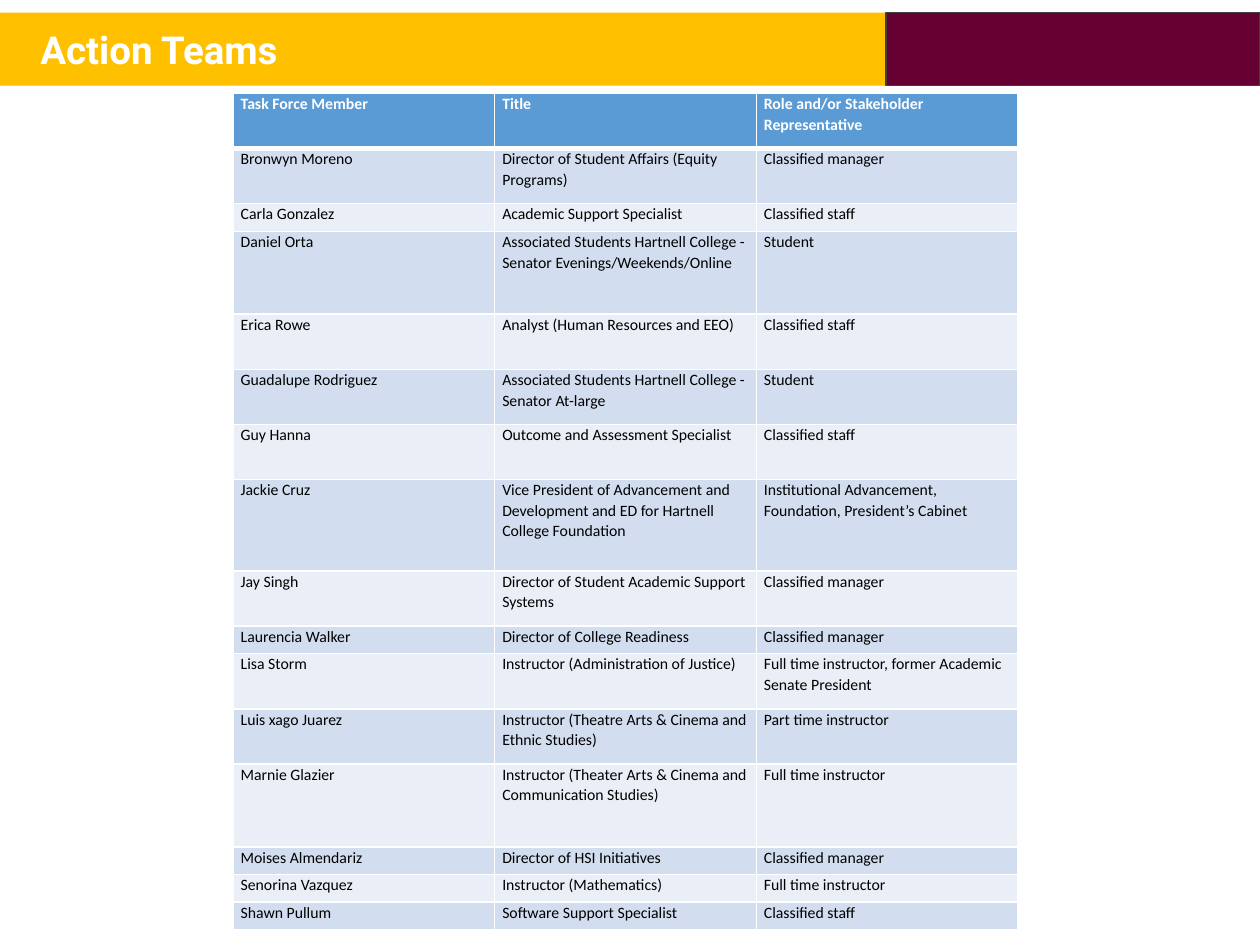
import pptx
import pptx.dml.color
import pptx.enum.shapes
import pptx.enum.text
import pptx.oxml
import pptx.oxml.ns
import pptx.util

RGBColor = pptx.dml.color.RGBColor
GOLD = RGBColor(0xFF, 0xC0, 0x00)
MAROON = RGBColor(0x66, 0x00, 0x33)
CHARCOAL = RGBColor(0x40, 0x40, 0x40)
HEADER_BLUE = RGBColor(0x5B, 0x9B, 0xD5)
BAND_BLUE = RGBColor(0xD2, 0xDE, 0xEF)
PALE_BLUE = RGBColor(0xEA, 0xEF, 0xF7)
WHITE = RGBColor(0xFF, 0xFF, 0xFF)
BLACK = RGBColor(0x00, 0x00, 0x00)

HEADINGS = ("Task Force Member", "Title", "Role and/or Stakeholder Representative")
MEMBERS = [
    ("Bronwyn Moreno", "Director of Student Affairs (Equity Programs)", "Classified manager"),
    ("Carla Gonzalez", "Academic Support Specialist", "Classified staff"),
    ("Daniel Orta", "Associated Students Hartnell College - Senator Evenings/Weekends/Online", "Student"),
    ("Erica Rowe", "Analyst (Human Resources and EEO)", "Classified staff"),
    ("Guadalupe Rodriguez", "Associated Students Hartnell College - Senator At-large", "Student"),
    ("Guy Hanna", "Outcome and Assessment Specialist", "Classified staff"),
    ("Jackie Cruz", "Vice President of Advancement and Development and ED for Hartnell College Foundation",
     "Institutional Advancement, Foundation, President’s Cabinet"),
    ("Jay Singh", "Director of Student Academic Support Systems", "Classified manager"),
    ("Laurencia Walker", "Director of College Readiness", "Classified manager"),
    ("Lisa Storm", "Instructor (Administration of Justice)",
     "Full time instructor, former Academic Senate President"),
    ("Luis xago Juarez", "Instructor (Theatre Arts & Cinema and Ethnic Studies)", "Part time instructor"),
    ("Marnie Glazier", "Instructor (Theater Arts & Cinema and Communication Studies)", "Full time instructor"),
    ("Moises Almendariz", "Director of HSI Initiatives", "Classified manager"),
    ("Senorina Vazquez", "Instructor (Mathematics)", "Full time instructor"),
    ("Shawn Pullum", "Software Support Specialist", "Classified staff"),
]
ROW_UNITS = (2, 2, 1, 3, 2, 2, 2, 3.3, 2, 1, 2, 2, 3, 1, 1, 1)


class ActionTeamsSlide:
    """Holds the style and the current slide, with lengths in slide shares of 10 by 7.5 inches."""

    title_font = "Roboto"
    table_font = "Calibri"

    def __init__(self, presentation):
        self.width = presentation.slide_width
        self.height = presentation.slide_height
        self.slide = presentation.slides.add_slide(presentation.slide_layouts[5])

    def box(self, left, top, width, height):
        return (round(left * self.width), round(top * self.height),
                round(width * self.width), round(height * self.height))

    def font(self, paragraph, name, size, color, bold):
        paragraph.font.name = name
        paragraph.font.size = pptx.util.Pt(size)
        paragraph.font.color.rgb = color
        paragraph.font.bold = bold

    def title(self, text, place, fill):
        banner = self.slide.shapes.title
        banner.left, banner.top, banner.width, banner.height = self.box(*place)
        banner.fill.solid()
        banner.fill.fore_color.rgb = fill
        frame = banner.text_frame
        frame.text = text
        frame.auto_size = pptx.enum.text.MSO_AUTO_SIZE.NONE
        frame.vertical_anchor = pptx.enum.text.MSO_ANCHOR.MIDDLE
        frame.margin_left = pptx.util.Inches(0.32)
        frame.margin_right = pptx.util.Inches(0.07)
        frame.margin_top = frame.margin_bottom = pptx.util.Inches(0.04)
        heading = frame.paragraphs[0]
        heading.alignment = pptx.enum.text.PP_ALIGN.LEFT
        self.font(heading, self.title_font, 22, WHITE, True)

    def block(self, place, fill, outline):
        block = self.slide.shapes.add_shape(pptx.enum.shapes.MSO_SHAPE.RECTANGLE, *self.box(*place))
        block.shadow.inherit = False
        block.fill.solid()
        block.fill.fore_color.rgb = fill
        block.line.color.rgb = outline
        block.line.width = pptx.util.Pt(1)

    def borders(self, cell, widths):
        properties = cell._tc.get_or_add_tcPr()
        for side, points in widths.items():
            properties.append(pptx.oxml.parse_xml(
                f'<a:{side} {pptx.oxml.ns.nsdecls("a")} w="{pptx.util.Pt(points)}">'
                f'<a:solidFill><a:srgbClr val="{WHITE}"/></a:solidFill></a:{side}>'))

    def cell(self, cell, text, fill, color, is_header):
        sides = {"lnL": 1, "lnR": 1}
        sides.update({"lnT": 1, "lnB": 3} if is_header else {"lnB": 1})
        self.borders(cell, sides)
        cell.fill.solid()
        cell.fill.fore_color.rgb = fill
        cell.margin_left = cell.margin_right = pptx.util.Inches(0.06)
        cell.margin_top = cell.margin_bottom = 0
        cell.text = text
        entry = cell.text_frame.paragraphs[0]
        entry.line_spacing = 1.07
        entry.space_after = pptx.util.Pt(4.8)
        self.font(entry, self.table_font, 9, color, is_header)

    def table(self, rows, units, place):
        left, top, width, height = self.box(*place)
        columns = len(rows[0])
        roster = self.slide.shapes.add_table(len(rows), columns, left, top, width, height).table
        for column in roster.columns:
            column.width = width // columns
        for index, (texts, unit) in enumerate(zip(rows, units)):
            roster.rows[index].height = round(height * unit / sum(units))
            is_header = index == 0
            fill = HEADER_BLUE if is_header else BAND_BLUE if index % 2 else PALE_BLUE
            color = WHITE if is_header else BLACK
            for cell, text in zip(roster.rows[index].cells, texts):
                self.cell(cell, text, fill, color, is_header)


def main():
    presentation = pptx.Presentation()
    presentation.slide_width = pptx.util.Inches(10)
    presentation.slide_height = pptx.util.Inches(7.5)
    teams = ActionTeamsSlide(presentation)
    banner_top, banner_height, split = 0.1 / 7.5, 0.58 / 7.5, 0.703
    teams.title("Action Teams", (0, banner_top, split, banner_height), GOLD)
    teams.block((split, banner_top, 1 - split, banner_height), MAROON, CHARCOAL)
    teams.table([HEADINGS] + MEMBERS, ROW_UNITS, (0.185, 0.74 / 7.5, 0.623, 6.64 / 7.5))
    presentation.save("out.pptx")


if __name__ == "__main__":
    main()
